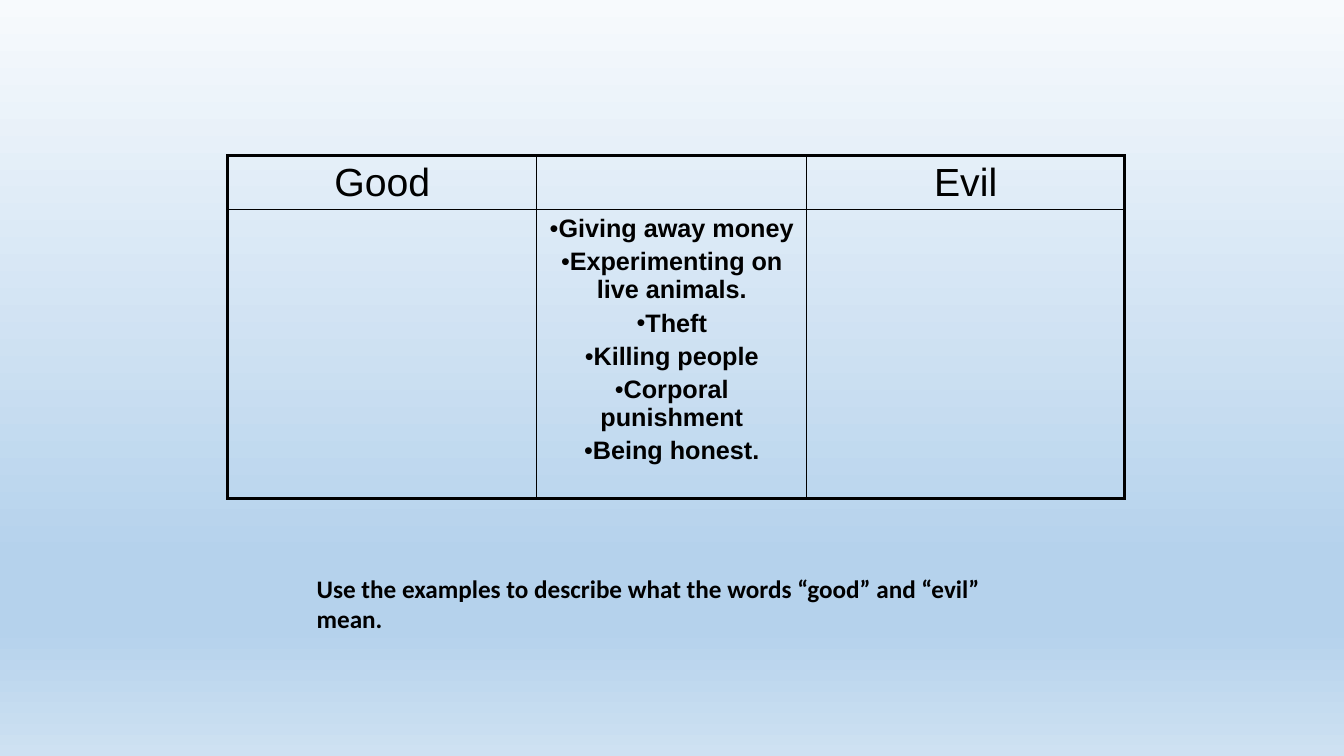
from pptx import Presentation
from pptx.dml.color import RGBColor
from pptx.enum.text import PP_ALIGN as Align
from pptx.oxml.ns import qn
from pptx.util import Cm, Pt
from lxml.etree import SubElement

# Content
HEADINGS = ["Good", "", "Evil"]
EXAMPLES = ["Giving away money", "Experimenting on live animals.", "Theft",
            "Killing people", "Corporal punishment", "Being honest."]
TASK = "Use the examples to describe what the words “good” and “evil” mean."

# Look and measures in centimetres
COLORS = {"ink": "000000", "pale": "F7FAFD", "sky": "B5D2EC", "mist": "CEE1F2"}
BACKGROUND_STOPS = [(0, "pale"), (74, "sky"), (83, "sky"), (100, "mist")]
COLUMNS = [7.79, 6.8, 8.01]
ROWS = [1.35, 7.28]
TABLE_CORNER = (5.74, 3.92)
TASK_BOX = (7.73, 14.32, 18.59, 1.78)
OUTER, INNER = 2.25, 1
HEADING_FONT = {"name": "Arial", "size": Pt(28), "bold": False}
EXAMPLE_FONT = {"name": "Arial", "size": Pt(18), "bold": True}
TASK_FONT = {"name": "Calibri", "size": Pt(18), "bold": True}


def add_bullet(para, bullet, typeface):
    properties = para._p.get_or_add_pPr()
    for key in ("marL", "indent"):
        properties.set(key, "0")
    SubElement(properties, qn("a:buFont"), typeface=typeface)
    SubElement(properties, qn("a:buChar"), char=bullet)


def write(frame, lines, font, align, gap=0, bullet=None):
    for index, line in enumerate(lines):
        para = frame.add_paragraph() if index else frame.paragraphs[0]
        para.alignment = align
        para.space_before = Pt(gap if index else 0)
        if bullet:
            add_bullet(para, bullet, font["name"])
        span = para.add_run()
        span.text = line
        for key, value in font.items():
            setattr(span.font, key, value)
        span.font.color.rgb = RGBColor.from_string(COLORS["ink"])


def add_color(parent, name):
    SubElement(parent, qn("a:srgbClr"), val=COLORS[name])


def draw_borders(cell, widths):
    properties = cell._tc.get_or_add_tcPr()
    for side, width in widths.items():
        line = SubElement(properties, qn(f"a:ln{side}"), w=str(Pt(width)))
        add_color(SubElement(line, qn("a:solidFill")), "ink")


deck = Presentation()
deck.slide_width, deck.slide_height = Cm(33.87), Cm(19.05)
page = deck.slides.add_slide(deck.slide_layouts[6])

# Background gradient, running downwards
fill = page.background.fill
fill.gradient()
fill.gradient_angle = 270
stops = page._element.xpath(".//a:gsLst")[0]
for stop in list(stops):
    stops.remove(stop)
for percent, name in BACKGROUND_STOPS:
    add_color(SubElement(stops, qn("a:gs"), pos=str(percent * 1000)), name)

# Table with a thick frame and thin inner lines
table = page.shapes.add_table(
    len(ROWS), len(COLUMNS), *map(Cm, TABLE_CORNER),
    Cm(sum(COLUMNS)), Cm(sum(ROWS))).table
table.first_row = table.horz_banding = False
for column, width in zip(table.columns, COLUMNS):
    column.width = Cm(width)
for row, height in zip(table.rows, ROWS):
    row.height = Cm(height)
last_row, last_column = len(ROWS) - 1, len(COLUMNS) - 1
for r in range(len(ROWS)):
    for c in range(len(COLUMNS)):
        cell = table.cell(r, c)
        on_frame = {"L": c == 0, "R": c == last_column,
                    "T": r == 0, "B": r == last_row}
        draw_borders(cell, {side: OUTER if outside else INNER
                            for side, outside in on_frame.items()})
        cell.fill.background()

for c, heading in enumerate(HEADINGS):
    if heading:
        write(table.cell(0, c).text_frame, [heading], HEADING_FONT, Align.CENTER)
write(table.cell(1, 1).text_frame, EXAMPLES, EXAMPLE_FONT, Align.CENTER,
      gap=3.6, bullet="•")

# Task below the table
box = page.shapes.add_textbox(*map(Cm, TASK_BOX))
box.text_frame.word_wrap = True
write(box.text_frame, [TASK], TASK_FONT, Align.LEFT)

deck.save("out.pptx")
